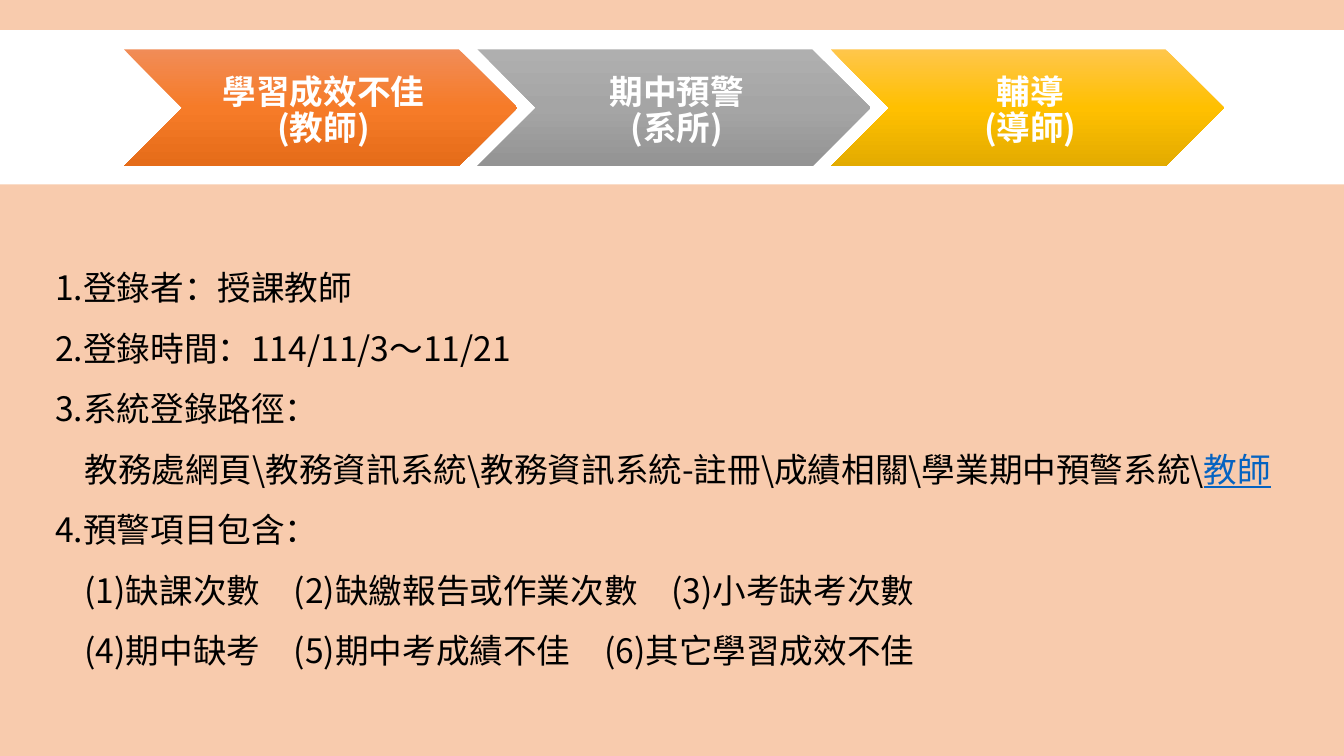
from copy import deepcopy
from dataclasses import dataclass

from lxml.etree import SubElement
from pptx import Presentation
from pptx.dml.color import RGBColor
from pptx.enum.shapes import MSO_SHAPE as Shape
from pptx.enum.text import MSO_ANCHOR as Anchor, PP_ALIGN as Align
from pptx.oxml.ns import qn
from pptx.util import Inches, Pt


@dataclass(frozen=True)
class Theme:
    font: str = "Noto Sans CJK SC"
    size: float = 24
    step_leading: float = 25.9
    body_leading: float = 43.2
    backdrop: str = "F8CBAD"
    white: str = "FFFFFF"
    ink: str = "000000"
    link: str = "0563C1"
    orange: tuple = ("F18C57", "F67B28", "E56C19")
    gray: tuple = ("AFAFAF", "A5A5A5", "939393")
    gold: tuple = ("FFC64B", "FFC000", "E3AB00")


THEME = Theme()
WIDTH, HEIGHT = 13.33, 7.5
STEP_LEFT, STEP_PITCH = 1.23, 3.505
INDENT = 0.29

STEPS = [
    ("學習成效不佳\v(教師)", THEME.orange),
    ("期中預警\v(系所)", THEME.gray),
    ("輔導\v(導師)", THEME.gold),
]
LINES = [
    ("1.登錄者：授課教師", 0, ""),
    ("2.登錄時間：114/11/3～11/21", 0, ""),
    ("3.系統登錄路徑：", 0, ""),
    ("教務處網頁\\教務資訊系統\\教務資訊系統-註冊\\成績相關\\學業期中預警系統\\", INDENT, "教師"),
    ("4.預警項目包含：", 0, ""),
    ("(1)缺課次數　(2)缺繳報告或作業次數　(3)小考缺考次數", INDENT, ""),
    ("(4)期中缺考　(5)期中考成績不佳　(6)其它學習成效不佳", INDENT, ""),
]


def add_plain_shape(slide, kind, left, top, width, height):
    shape = slide.shapes.add_shape(
        kind, Inches(left), Inches(top), Inches(width), Inches(height))
    shape.shadow.inherit = False
    shape.line.fill.background()
    return shape


def add_band(slide, top, height, color):
    band = add_plain_shape(slide, Shape.RECTANGLE, 0, top, WIDTH, height)
    band.fill.solid()
    band.fill.fore_color.rgb = RGBColor.from_string(color)


def fill_gradient(shape, colors):
    shape.fill.gradient()
    shape.fill.gradient_angle = 270
    stop_list = next(shape._element.iter(qn("a:gsLst")))
    stop_list.insert(1, deepcopy(stop_list[0]))
    for index, (stop, color) in enumerate(zip(shape.fill.gradient_stops, colors)):
        stop.position = index / (len(colors) - 1)
        stop.color.rgb = RGBColor.from_string(color)


def format_run(run, color, bold=False, underline=False):
    font = run.font
    font.name, font.size = THEME.font, Pt(THEME.size)
    font.bold, font.underline = bold, underline
    font.color.rgb = RGBColor.from_string(color)
    SubElement(font._element, qn("a:ea")).set("typeface", THEME.font)


def add_step(slide, column, label, colors):
    step = add_plain_shape(
        slide, Shape.CHEVRON, STEP_LEFT + column * STEP_PITCH, 0.49, 3.9, 1.16)
    fill_gradient(step, colors)
    frame = step.text_frame
    frame.text = label
    frame.word_wrap = True
    frame.vertical_anchor = Anchor.MIDDLE
    frame.margin_left = frame.margin_top = Inches(0.1)
    frame.margin_right = frame.margin_bottom = Inches(0.04)
    paragraph = frame.paragraphs[0]
    paragraph.alignment = Align.CENTER
    paragraph.line_spacing = Pt(THEME.step_leading)
    for run in paragraph.runs:
        format_run(run, THEME.white, bold=True)


def add_instructions(slide):
    box = slide.shapes.add_textbox(
        Inches(0.45), Inches(2.4), Inches(12.88), Inches(4.34))
    frame = box.text_frame
    frame.word_wrap = True
    frame.text = "\n".join(text for text, indent, link in LINES)
    for paragraph, (text, indent, link) in zip(frame.paragraphs, LINES):
        paragraph.line_spacing = Pt(THEME.body_leading)
        paragraph._p.get_or_add_pPr().set("marL", str(Inches(indent)))
        format_run(paragraph.runs[0], THEME.ink)
        if link:
            run = paragraph.add_run()
            run.text = link
            format_run(run, THEME.link, underline=True)


def main():
    presentation = Presentation()
    presentation.slide_width = Inches(WIDTH)
    presentation.slide_height = Inches(HEIGHT)
    slide = presentation.slides.add_slide(presentation.slide_layouts[6])
    add_band(slide, 0, HEIGHT, THEME.backdrop)
    add_band(slide, 0.3, 1.53, THEME.white)
    for column, (label, colors) in enumerate(STEPS):
        add_step(slide, column, label, colors)
    add_instructions(slide)
    presentation.save("out.pptx")


if __name__ == "__main__":
    main()
